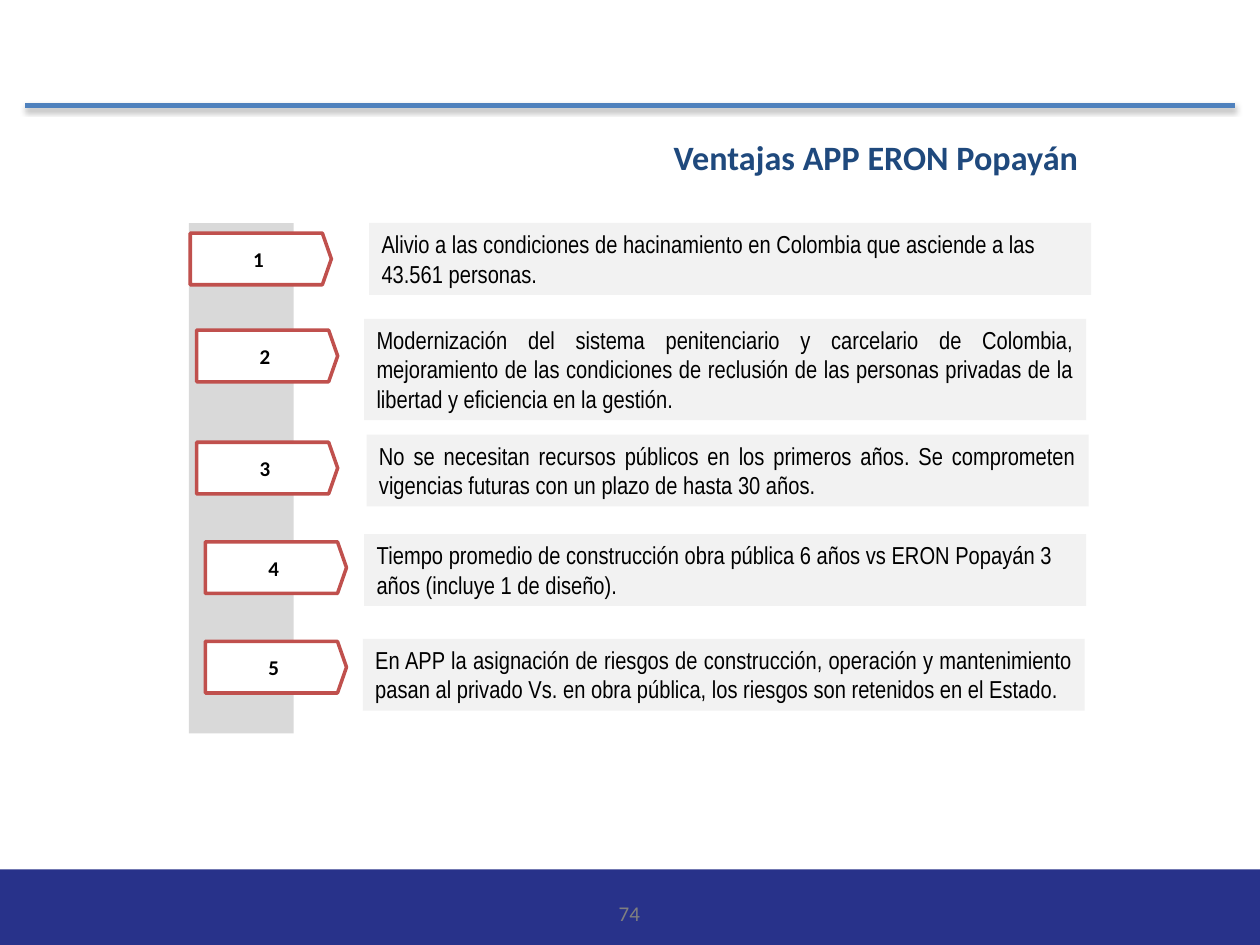
from lxml.etree import SubElement
from pptx import Presentation
from pptx.dml.color import RGBColor
from pptx.enum.shapes import MSO_CONNECTOR as Connector, MSO_SHAPE as Shape
from pptx.enum.text import MSO_ANCHOR as Anchor, MSO_AUTO_SIZE as AutoSize, PP_ALIGN as Align
from pptx.oxml.ns import qn
from pptx.util import Inches, Pt

WIDTH, HEIGHT = 10, 7.5
COLORS = {
    "footer": "28328A", "rule": "4F81BD", "number": "808080", "title": "1F497D",
    "band": "D9D9D9", "panel": "F2F2F2", "tag": "FFFFFF", "outline": "C0504D",
    "text": "000000", "shadow": "000000",
}
TAG_SIZE = (1.12, 0.41)
PANEL_WIDTH = 5.73
LINE_HEIGHT, PANEL_PADDING = 0.235, 0.1

# tag left, tag top, panel left, panel top, lines, alignment, text
ADVANTAGES = [
    (1.51, 1.85, 2.93, 1.77, 2, Align.LEFT,
     "Alivio a las condiciones de hacinamiento en Colombia que asciende a las "
     "43.561 personas."),
    (1.56, 2.62, 2.89, 2.53, 3, Align.JUSTIFY,
     "Modernización del sistema penitenciario y carcelario de Colombia, "
     "mejoramiento de las condiciones de reclusión de las personas privadas de la "
     "libertad y eficiencia en la gestión. "),
    (1.56, 3.51, 2.91, 3.45, 2, Align.JUSTIFY,
     "No se necesitan recursos públicos en los primeros años. Se comprometen "
     "vigencias futuras con un plazo de hasta 30 años. "),
    (1.63, 4.3, 2.89, 4.24, 2, Align.LEFT,
     "Tiempo promedio de construcción obra pública 6 años vs ERON Popayán 3 "
     "años (incluye 1 de diseño)."),
    (1.63, 5.09, 2.88, 5.07, 2, Align.JUSTIFY,
     "En APP la asignación de riesgos de construcción, operación y mantenimiento "
     "pasan al privado Vs. en obra pública, los riesgos son retenidos en el Estado."),
]


def color(name):
    return RGBColor.from_string(COLORS[name])


def box(left, top, width, height):
    return [Inches(value) for value in (left, top, width, height)]


def write(shape, text, size, font="Calibri", fill="text", bold=False,
          align=Align.LEFT, anchor=Anchor.TOP):
    frame = shape.text_frame
    frame.word_wrap = True
    frame.auto_size = AutoSize.NONE
    frame.vertical_anchor = anchor
    paragraph = frame.paragraphs[0]
    paragraph.alignment = align
    run = paragraph.add_run()
    run.text = text
    run.font.name, run.font.size, run.font.bold = font, Pt(size), bold
    run.font.color.rgb = color(fill)


def add_block(slide, kind, place, fill, outline=None, adjustment=None):
    shape = slide.shapes.add_shape(kind, *box(*place))
    shape.shadow.inherit = False
    shape.fill.solid()
    shape.fill.fore_color.rgb = color(fill)
    if outline:
        shape.line.color.rgb = color(outline)
        shape.line.width = Pt(2)
    else:
        shape.line.fill.background()
    if adjustment is not None:
        shape.adjustments[0] = adjustment
    return shape


def add_rule(slide, margin, top):
    rule = slide.shapes.add_connector(
        Connector.STRAIGHT, Inches(margin), Inches(top), Inches(WIDTH - margin), Inches(top))
    rule.line.color.rgb = color("rule")
    rule.line.width = Pt(3)
    # Soft shadow straight below the rule
    effects = SubElement(rule._element.spPr, qn("a:effectLst"))
    shadow = SubElement(effects, qn("a:outerShdw"), blurRad=str(Pt(3.1)),
                        dist=str(Pt(1.8)), dir="5400000", rotWithShape="0")
    tint = SubElement(shadow, qn("a:srgbClr"), val=COLORS["shadow"])
    SubElement(tint, qn("a:alpha"), val="35000")


def add_title(slide, text):
    title = slide.shapes.title
    title.left, title.top, title.width, title.height = box(3.72, 1.03, 4.94, 0.43)
    write(title, text, 19.5, fill="title", bold=True, align=Align.RIGHT)


def add_advantage(slide, number, tag_left, tag_top, left, top, lines, align, text):
    tag = add_block(slide, Shape.PENTAGON, (tag_left, tag_top, *TAG_SIZE), "tag",
                    outline="outline", adjustment=0.174)
    write(tag, str(number), 12, bold=True, align=Align.CENTER, anchor=Anchor.MIDDLE)
    height = lines * LINE_HEIGHT + PANEL_PADDING
    panel = add_block(slide, Shape.RECTANGLE, (left, top, PANEL_WIDTH, height), "panel")
    write(panel, text, 14, font="Arial Narrow", align=align)


def main():
    presentation = Presentation()
    presentation.slide_width, presentation.slide_height = Inches(WIDTH), Inches(HEIGHT)
    slide = presentation.slides.add_slide(presentation.slide_layouts[5])

    # Footer band, top rule and page number
    footer_height = HEIGHT * 0.08
    add_block(slide, Shape.RECTANGLE,
              (0, HEIGHT - footer_height, WIDTH, footer_height), "footer")
    add_rule(slide, 0.2, 0.84)
    page_number = slide.shapes.add_textbox(*box(3.83, 7.05, 2.33, 0.4))
    write(page_number, "74", 12, fill="number", align=Align.CENTER, anchor=Anchor.MIDDLE)

    # Title and numbered advantages over the grey band
    add_title(slide, "Ventajas APP ERON Popayán")
    add_block(slide, Shape.ROUNDED_RECTANGLE, (1.5, 1.77, 0.83, 4.05), "band", adjustment=0)
    for number, advantage in enumerate(ADVANTAGES, start=1):
        add_advantage(slide, number, *advantage)

    presentation.save("out.pptx")


if __name__ == "__main__":
    main()
